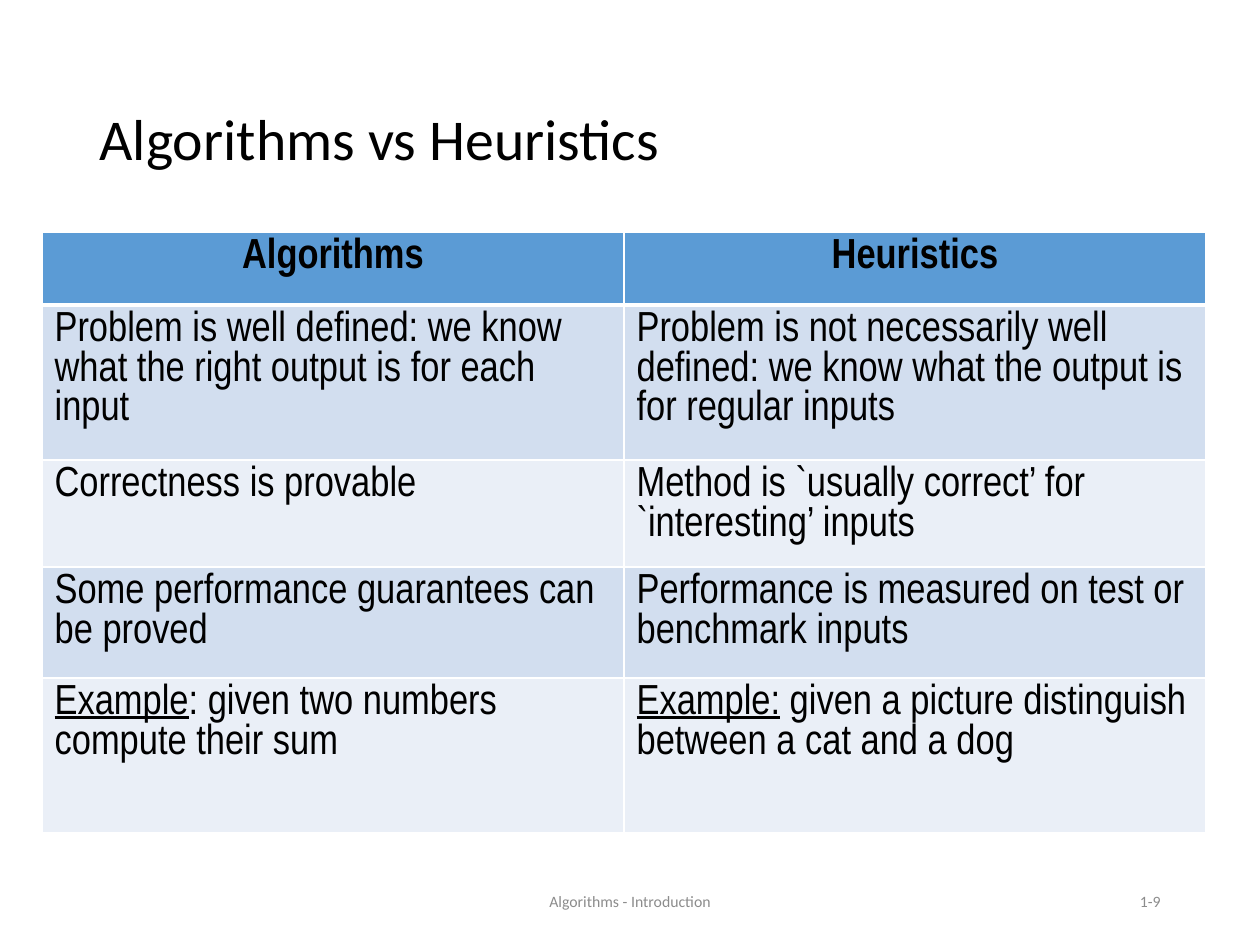
import dataclasses
import typing

import lxml.etree
import pptx
import pptx.dml.color
import pptx.enum.text
import pptx.oxml.ns
import pptx.util

PX_PER_INCH = 126
ALIGN = pptx.enum.text.PP_ALIGN
MIDDLE = pptx.enum.text.MSO_ANCHOR.MIDDLE


@dataclasses.dataclass
class Box:
    left: int
    top: int
    width: int
    height: int


@dataclasses.dataclass
class Row:
    height: int
    fill: str
    cells: tuple[str, str]
    lead: tuple[str, str] = ("", "")  # underlined opening words
    header: bool = False


@dataclasses.dataclass
class FooterText:
    text: str
    box: Box
    align: typing.Any


ROWS = [
    Row(73, "5B9BD5", ("Algorithms", "Heuristics"), header=True),
    Row(155, "D2DEEF", (
        "Problem is well defined: we know what the right output is for each input",
        "Problem is not necessarily well defined: we know what the output is for regular inputs")),
    Row(107, "EAEFF7", ("Correctness is provable",
                        "Method is `usually correct’ for `interesting’ inputs")),
    Row(111, "D2DEEF", ("Some performance guarantees can be proved",
                        "Performance is measured on test or benchmark inputs")),
    Row(155, "EAEFF7", (": given two numbers compute their sum",
                        " given a picture distinguish between a cat and a dog"),
        lead=("Example", "Example:")),
]
FOOTERS = [
    FooterText("Algorithms - Introduction", Box(417, 876, 426, 50), ALIGN.CENTER),
    FooterText("1-9", Box(890, 876, 283, 50), ALIGN.RIGHT),
]


def px(length: int) -> pptx.util.Emu:
    return pptx.util.Emu(round(length * 914400 / PX_PER_INCH))


def color(value: str) -> pptx.dml.color.RGBColor:
    return pptx.dml.color.RGBColor.from_string(value)


def place(box: Box) -> tuple:
    return px(box.left), px(box.top), px(box.width), px(box.height)


def write(frame, text: str, *, size: int, font: str = "Calibri", ink: str = "000000",
          align=ALIGN.LEFT, bold: bool = False, lead: str = "",
          spacing: float | None = None) -> None:
    """Fill the first paragraph, with an optional underlined lead."""
    frame.word_wrap = True
    para = frame.paragraphs[0]
    para.alignment = align
    if spacing:
        para.line_spacing = spacing
    for words, underline in ((lead, True), (text, False)):
        if not words:
            continue
        span = para.add_run()
        span.text = words
        span.font.size = pptx.util.Pt(size)
        span.font.name = font
        span.font.color.rgb = color(ink)
        span.font.bold = bold
        span.font.underline = underline


def set_borders(cell, widths: dict[str, int]) -> None:
    """Draw white cell borders; they must precede the fill in the XML."""
    properties = cell._tc.get_or_add_tcPr()
    for position, (side, points) in enumerate(widths.items()):
        line = lxml.etree.Element(pptx.oxml.ns.qn(f"a:ln{side}"), w=str(pptx.util.Pt(points)))
        fill = lxml.etree.SubElement(line, pptx.oxml.ns.qn("a:solidFill"))
        lxml.etree.SubElement(fill, pptx.oxml.ns.qn("a:srgbClr"), val="FFFFFF")
        properties.insert(position, line)


def add_title(page, text: str, box: Box) -> None:
    title = page.shapes.title
    title.left, title.top, title.width, title.height = place(box)
    title.text_frame.auto_size = pptx.enum.text.MSO_AUTO_SIZE.NONE
    title.text_frame.vertical_anchor = MIDDLE
    write(title.text_frame, text, size=33, spacing=0.9)


def add_comparison(page, rows: list[Row], left: int, top: int, column_width: int) -> None:
    box = Box(left, top, 2 * column_width, sum(row.height for row in rows))
    table = page.shapes.add_table(len(rows), 2, *place(box)).table
    for column in table.columns:
        column.width = px(column_width)
    for index, row in enumerate(rows):
        table.rows[index].height = px(row.height)
        below_header = index > 0 and rows[index - 1].header
        borders = {"L": 1, "R": 1, "T": 3 if below_header else 1, "B": 3 if row.header else 1}
        for cell, text, lead in zip(table.rows[index].cells, row.cells, row.lead):
            cell.fill.solid()
            cell.fill.fore_color.rgb = color(row.fill)
            set_borders(cell, borders)
            write(cell.text_frame, text, size=24, font="Arial Narrow", lead=lead,
                  bold=row.header, align=ALIGN.CENTER if row.header else ALIGN.LEFT)


def add_footer(page, footer: FooterText) -> None:
    frame = page.shapes.add_textbox(*place(footer.box)).text_frame
    frame.vertical_anchor = MIDDLE
    write(frame, footer.text, size=9, ink="8C8C8C", align=footer.align)


def main() -> None:
    deck = pptx.Presentation()
    deck.slide_width, deck.slide_height = px(1260), px(945)
    page = deck.slides.add_slide(deck.slide_layouts[5])  # title only
    add_title(page, "Algorithms vs Heuristics", Box(87, 50, 1086, 183))
    add_comparison(page, ROWS, left=42, top=232, column_width=582)
    for footer in FOOTERS:
        add_footer(page, footer)
    deck.save("out.pptx")


if __name__ == "__main__":
    main()
